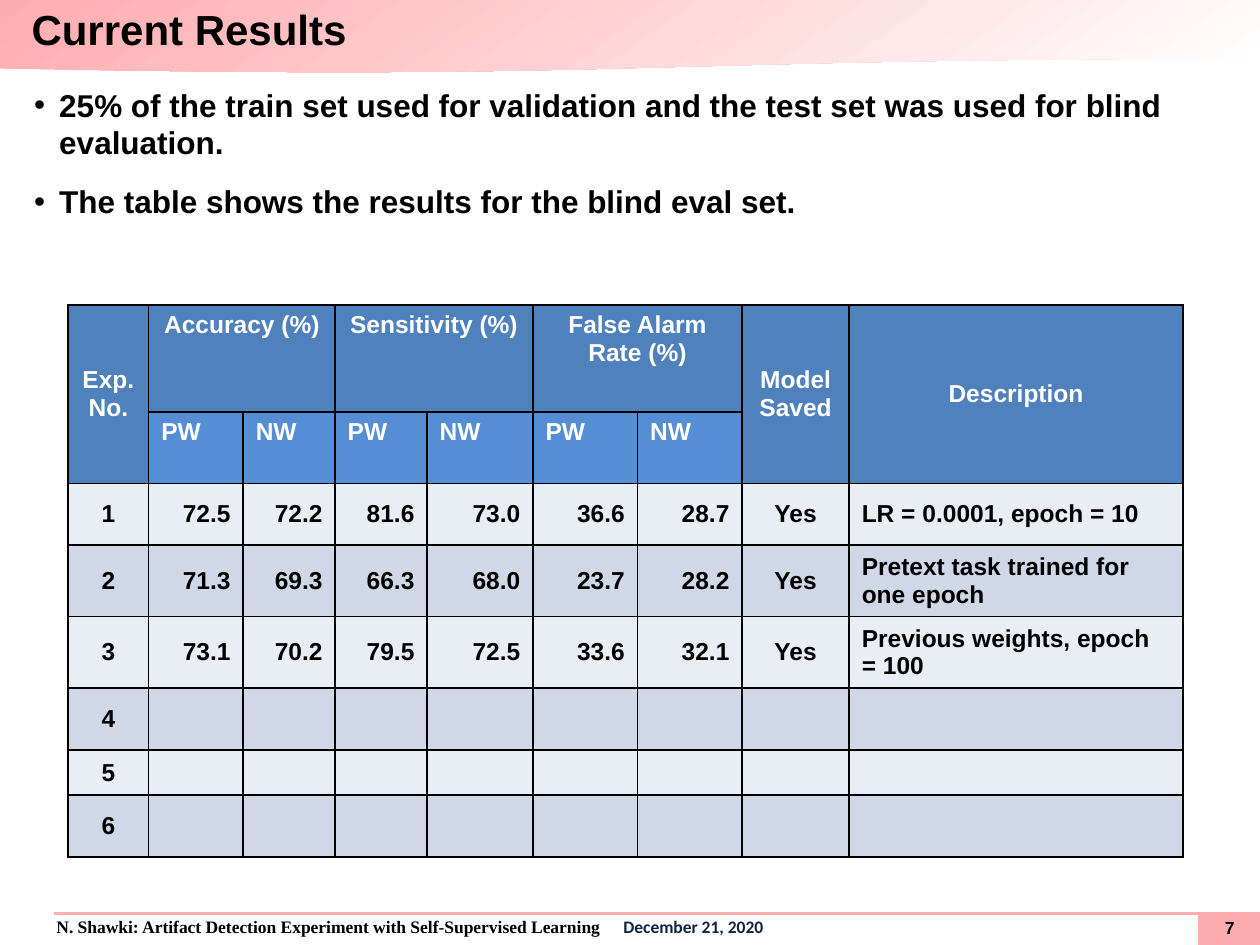
from dataclasses import dataclass
from typing import Any

from lxml.etree import SubElement
from pptx import Presentation
from pptx.dml.color import RGBColor
from pptx.enum.shapes import MSO_CONNECTOR as Connector, MSO_SHAPE as Shape
from pptx.enum.text import MSO_ANCHOR as Anchor, PP_ALIGN as Align
from pptx.oxml.ns import qn
from pptx.util import Emu, Inches, Pt

BLACK = RGBColor(0x00, 0x00, 0x00)
WHITE = RGBColor(0xFF, 0xFF, 0xFF)
PINK = RGBColor(0xFF, 0xAC, 0xAF)
NAVY = RGBColor(0x0F, 0x24, 0x3E)
HEADER_BLUE = RGBColor(0x4F, 0x81, 0xBD)
SUBHEADER_BLUE = RGBColor(0x55, 0x8E, 0xD5)
BANDS = (RGBColor(0xE9, 0xED, 0xF4), RGBColor(0xD0, 0xD8, 0xE8))

# The slide is a grid of 100 columns by 75 rows of square units.
UNIT = Inches(0.1)
GRID_COLUMNS, GRID_ROWS = 100, 75

COLUMN_WIDTHS = (6.4, 7.5, 7.3, 7.3, 8.4, 8.3, 8.3, 8.5, 26.5)
ROW_HEIGHTS = (8.5, 5.3, 4.9, 5.4, 5.4, 4.9, 3.6, 4.9)
TOP_HEADER = ("Exp. No.", "Accuracy (%)", "", "Sensitivity (%)", "",
              "False Alarm Rate (%)", "", "Model Saved", "Description")
SUBHEADER = ("",) + ("PW", "NW") * 3 + ("", "")
EMPTY = ("",) * 8
RESULTS = (
    ("1", "72.5", "72.2", "81.6", "73.0", "36.6", "28.7", "Yes",
     "LR = 0.0001, epoch = 10"),
    ("2", "71.3", "69.3", "66.3", "68.0", "23.7", "28.2", "Yes",
     "Pretext task trained for one epoch"),
    ("3", "73.1", "70.2", "79.5", "72.5", "33.6", "32.1", "Yes",
     "Previous weights, epoch = 100"),
    ("4", *EMPTY), ("5", *EMPTY), ("6", *EMPTY),
)
RESULT_ALIGNS = (Align.CENTER,) + (Align.RIGHT,) * 6 + (Align.CENTER, Align.LEFT)
TALL_COLUMNS = (0, 7, 8)
PAIR_COLUMNS = (1, 3, 5)


@dataclass(frozen=True)
class Area:
    left: float
    top: float
    width: float
    height: float

    def lengths(self) -> tuple[Emu, ...]:
        return tuple(units(n) for n in (self.left, self.top, self.width, self.height))


@dataclass(frozen=True)
class Style:
    size: float
    color: RGBColor = BLACK
    name: str = "Arial"


def units(count: float) -> Emu:
    return Emu(round(count * UNIT))


def apply(target: Any, values: dict[str, Any]) -> None:
    for name, value in values.items():
        setattr(target, name, value)


def add_span(para: Any, text: str, style: Style) -> None:
    span = para.add_run()
    span.text = text
    apply(span.font, {"size": Pt(style.size), "name": style.name, "bold": True})
    span.font.color.rgb = style.color


def add_text_frame(page: Any, area: Area, margins: tuple[float, float, float, float],
                   anchor: Anchor = Anchor.TOP) -> Any:
    """Add a wrapping text box; margins run left, top, right, bottom in units."""
    frame = page.shapes.add_textbox(*area.lengths()).text_frame
    sides = ("margin_left", "margin_top", "margin_right", "margin_bottom")
    apply(frame, dict(zip(sides, map(units, margins))))
    apply(frame, {"word_wrap": True, "vertical_anchor": anchor})
    return frame


def add_shape(page: Any, kind: Shape, area: Area) -> Any:
    shape = page.shapes.add_shape(kind, *area.lengths())
    shape.shadow.inherit = False
    shape.line.fill.background()
    return shape


def add_banner(page: Any) -> None:
    fill = add_shape(page, Shape.FLOWCHART_DOCUMENT, Area(0, 0, 100.1, 5.8)).fill
    fill.gradient()
    fill.gradient_angle = 360 - 55
    for stop, position, color in zip(fill.gradient_stops, (0, 1), (PINK, WHITE)):
        stop.position = position
        stop.color.rgb = color


def add_footer(page: Any) -> None:
    corner = add_shape(page, Shape.RECTANGLE, Area(95.1, 72.4, 5, 2.6))
    corner.fill.solid()
    corner.fill.fore_color.rgb = PINK

    frame = add_text_frame(page, Area(0.4, 72.3, 99.7, 2.6), (1, 0.5, 1, 0.5))
    para = frame.paragraphs[0]
    para.line_spacing = 0.95
    properties = para._p.get_or_add_pPr()
    properties.set("marL", str(units(3.1)))
    properties.set("indent", "0")
    tabs = SubElement(properties, qn("a:tabLst"))
    SubElement(tabs, qn("a:tab"), pos=str(units(93.1)), algn="r")
    add_span(para, "N. Shawki: Artifact Detection Experiment with Self-Supervised Learning",
             Style(10, name="Times New Roman"))
    add_span(para, "\tDecember 21, 2020", Style(10, NAVY, "Calibri"))

    rule = page.shapes.add_connector(
        Connector.STRAIGHT, units(4.3), units(72.5), units(GRID_COLUMNS), units(72.5))
    rule.line.color.rgb = PINK
    rule.line.width = Pt(1.5)
    SubElement(rule._element.spPr, qn("a:effectLst"))

    number = add_text_frame(page, Area(95.6, 72.8, 4, 1.7), (0, 0, 0, 0), Anchor.MIDDLE)
    number.paragraphs[0].alignment = Align.CENTER
    add_span(number.paragraphs[0], "7", Style(10))


def add_title(page: Any) -> None:
    frame = add_text_frame(page, Area(0, 0, 100.1, 3.6), (2.5, 1, 0, 0), Anchor.MIDDLE)
    add_span(frame.paragraphs[0], "Current Results", Style(24))


def add_bullets(page: Any, lines: tuple[str, ...]) -> None:
    frame = add_text_frame(page, Area(2.7, 6.8, 94.9, 13.2), (0, 0, 0, 0))
    for index, line in enumerate(lines):
        para = frame.add_paragraph() if index else frame.paragraphs[0]
        para.space_after = Pt(12)
        properties = para._p.get_or_add_pPr()
        properties.set("marL", str(units(2)))
        properties.set("indent", str(-units(2)))
        SubElement(properties, qn("a:buFont"), typeface="Arial")
        SubElement(properties, qn("a:buChar"), char="•")
        add_span(para, line, Style(18))


def format_cell(cell: Any, text: str, fill: RGBColor, color: RGBColor,
                align: Align, anchor: Anchor) -> None:
    properties = cell._tc.get_or_add_tcPr()
    for side in ("lnL", "lnR", "lnT", "lnB"):
        border = SubElement(properties, qn(f"a:{side}"), w=str(Pt(1)))
        SubElement(SubElement(border, qn("a:solidFill")), qn("a:srgbClr"), val=str(BLACK))
    cell.fill.solid()
    cell.fill.fore_color.rgb = fill
    cell.vertical_anchor = anchor
    para = cell.text_frame.paragraphs[0]
    para.alignment = align
    if text:
        add_span(para, text, Style(14, color))
    else:
        SubElement(para._p, qn("a:endParaRPr"), sz="1400")


def add_results_table(page: Any) -> None:
    area = Area(5.4, 24.2, sum(COLUMN_WIDTHS), sum(ROW_HEIGHTS))
    table = page.shapes.add_table(
        len(ROW_HEIGHTS), len(COLUMN_WIDTHS), *area.lengths()).table
    apply(table, {"first_row": False, "horz_banding": False})
    for column, width in zip(table.columns, COLUMN_WIDTHS):
        column.width = units(width)
    for row, height in zip(table.rows, ROW_HEIGHTS):
        row.height = units(height)

    for index, text in enumerate(TOP_HEADER):
        tall = index in TALL_COLUMNS
        format_cell(table.cell(0, index), text, HEADER_BLUE, WHITE, Align.CENTER,
                    Anchor.MIDDLE if tall else Anchor.TOP)
        format_cell(table.cell(1, index), SUBHEADER[index],
                    HEADER_BLUE if tall else SUBHEADER_BLUE, WHITE, Align.LEFT, Anchor.TOP)
    for number, result in enumerate(RESULTS):
        for index, (text, align) in enumerate(zip(result, RESULT_ALIGNS)):
            format_cell(table.cell(number + 2, index), text, BANDS[number % 2],
                        BLACK, align, Anchor.MIDDLE)

    for index in TALL_COLUMNS:
        table.cell(0, index).merge(table.cell(1, index))
    for index in PAIR_COLUMNS:
        table.cell(0, index).merge(table.cell(0, index + 1))


def main() -> None:
    deck = Presentation()
    apply(deck, {"slide_width": units(GRID_COLUMNS), "slide_height": units(GRID_ROWS)})
    page = deck.slides.add_slide(deck.slide_layouts[6])
    add_banner(page)
    add_footer(page)
    add_title(page)
    add_bullets(page, (
        "25% of the train set used for validation and the test set was used for blind evaluation.",
        "The table shows the results for the blind eval set.",
    ))
    add_results_table(page)
    deck.save("out.pptx")


if __name__ == "__main__":
    main()
